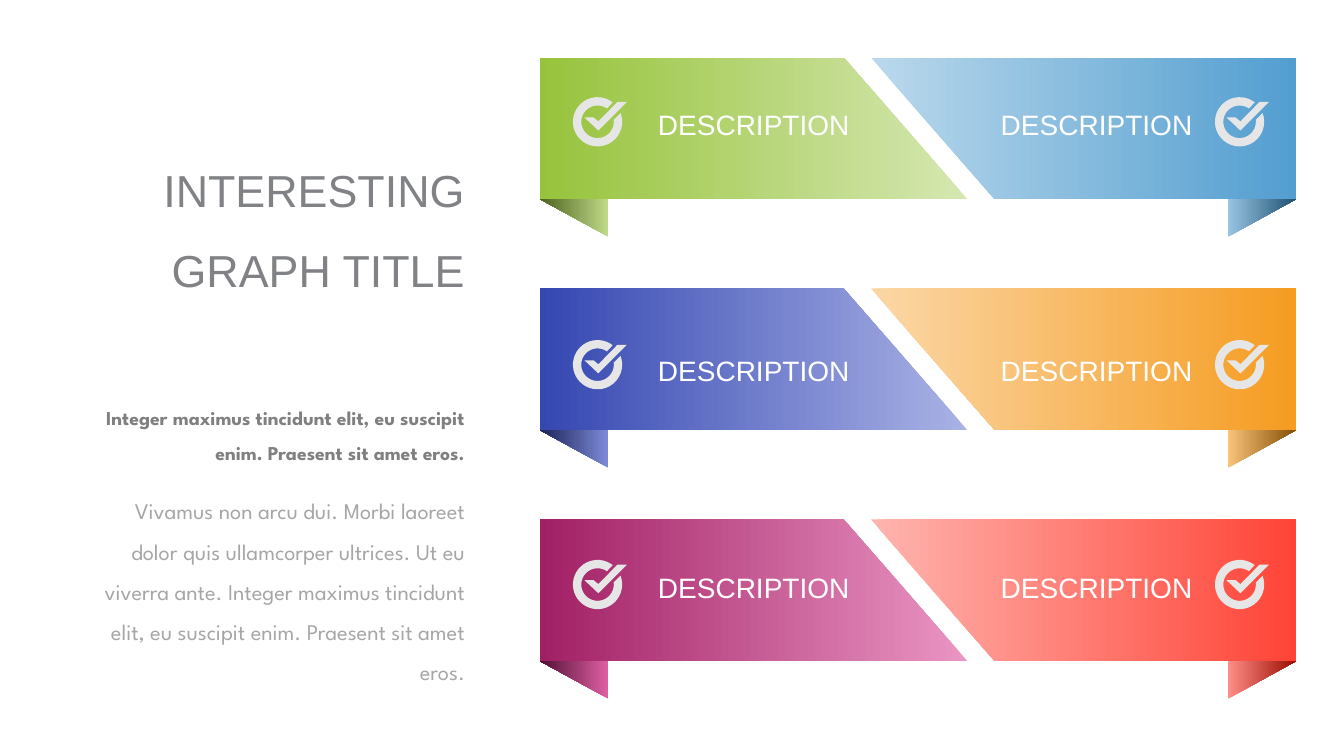
"""Build a slide with a title, two text blocks and six folded ribbon banners."""
from math import cos, radians, sin

from pptx import Presentation
from pptx.dml.color import RGBColor
from pptx.enum.text import MSO_ANCHOR, MSO_AUTO_SIZE, PP_ALIGN
from pptx.util import Cm, Pt

MIDDLE = MSO_ANCHOR.MIDDLE
NO_AUTOFIT = MSO_AUTO_SIZE.NONE
RIGHT, CENTER = PP_ALIGN.RIGHT, PP_ALIGN.CENTER
TITLE_ONLY = 5

BANNER_TOP, BANNER_PITCH, BANNER_HEIGHT = 1.45, 5.82, 3.57
FOLD_HEIGHT = 0.95
RING_OUTER, RING_INNER = 0.62, 0.41
TICK = [(0.5, -0.5), (0.02, -0.01), (-0.1, -0.11), (-0.33, -0.11), (0.02, 0.22), (0.74, -0.5)]

SIDES = [
    {"edge": 13.61, "top": 21.26, "bottom": 24.38, "fold": 15.34, "label": 15.67, "icon": 15.06, "angle": 180},
    {"edge": 32.66, "top": 21.95, "bottom": 25.07, "fold": 30.94, "label": 24.31, "icon": 31.24, "angle": 0},
]
ROWS = [
    {"label": 2.18, "icon": 3.07,
     "colors": [("D5E7B1", "97C33C", "C1DB8A", "4C621E"), ("BAD8EC", "539ED0", "98C5E3", "1F5172")]},
    {"label": 8.38, "icon": 9.19,
     "colors": [("A9B2E5", "3547B1", "7E8BD8", "1B2358"), ("FBD7A6", "F59C21", "F9C47A", "855006")]},
    {"label": 13.84, "icon": 14.73,
     "colors": [("EA95C3", "A12065", "DF60A4", "511033"), ("FFB4AF", "FF4437", "FF8F87", "9B0A00")]},
]


def rgb(hex_color):
    """Turn a hex string into a colour."""
    return RGBColor.from_string(hex_color)


def arc(radius, start, end, steps=40):
    """Return points along an arc, with angles in degrees, clockwise."""
    angles = [radians(start + (end - start) * i / steps) for i in range(steps + 1)]
    return [(radius * cos(a), radius * sin(a)) for a in angles]


class RibbonSlide:
    """Holds the style and the current slide."""

    heading_font = "Arial"
    body_font = "League Spartan"
    icon_color = "E7E6E6"
    label_color = "FFFFFF"
    line_spacing = 1.5

    def __init__(self, deck):
        """Add a title-only slide to the deck."""
        self.slide = deck.slides.add_slide(deck.slide_layouts[TITLE_ONLY])

    def set_text(self, box, text, size, color, font, align, bold=False):
        """Format a text shape and put one run into it."""
        frame = box.text_frame
        frame.word_wrap = True
        frame.auto_size = NO_AUTOFIT
        frame.vertical_anchor = MIDDLE
        paragraph = frame.paragraphs[0]
        paragraph.alignment = align
        paragraph.line_spacing = self.line_spacing
        run = paragraph.add_run()
        run.text = text
        run.font.size = Pt(size)
        run.font.name = font
        run.font.bold = bold
        run.font.color.rgb = rgb(color)

    def title(self, text, left, top, width, height):
        """Place and format the title placeholder."""
        heading = self.slide.shapes.title
        heading.left, heading.top = Cm(left), Cm(top)
        heading.width, heading.height = Cm(width), Cm(height)
        self.set_text(heading, text, 32, "818285", self.heading_font, RIGHT)

    def body(self, text, left, top, width, height, size, color, bold=False):
        """Add a right-aligned text block."""
        block = self.slide.shapes.add_textbox(Cm(left), Cm(top), Cm(width), Cm(height))
        self.set_text(block, text, size, color, self.body_font, RIGHT, bold)

    def outline(self, shapes, points):
        """Add a closed borderless polygon."""
        corners = [(Cm(x), Cm(y)) for x, y in points]
        builder = shapes.build_freeform(*corners[0], scale=1.0)
        builder.add_line_segments(corners[1:], close=True)
        polygon = builder.convert_to_shape()
        polygon.shadow.inherit = False
        polygon.line.fill.background()
        return polygon

    def gradient(self, points, colors, angle):
        """Add a polygon with a two-colour gradient."""
        fill = self.outline(self.slide.shapes, points).fill
        fill.gradient()
        fill.gradient_angle = angle
        for stop, color in zip(fill.gradient_stops, colors):
            stop.color.rgb = rgb(color)

    def banner(self, side, top, colors):
        """Add a slanted banner and the fold below it."""
        bottom = top + BANNER_HEIGHT
        edge, fold = side["edge"], side["fold"]
        face = [(side["bottom"], bottom), (edge, bottom), (edge, top), (side["top"], top)]
        self.gradient(face, colors[:2], side["angle"])
        flap = [(fold, bottom), (fold, bottom + FOLD_HEIGHT), (edge, bottom)]
        self.gradient(flap, colors[2:], side["angle"])

    def badge(self, text, side, row):
        """Add a label grouped with its check icon."""
        shapes = self.slide.shapes.add_group_shape().shapes
        ring = arc(RING_INNER, -7, 305) + arc(RING_OUTER, 308, -21)
        for offsets in (TICK, ring):
            points = [(side["icon"] + x, row["icon"] + y) for x, y in offsets]
            part = self.outline(shapes, points)
            part.fill.solid()
            part.fill.fore_color.rgb = rgb(self.icon_color)
        label = shapes.add_textbox(Cm(side["label"]), Cm(row["label"]), Cm(6.65), Cm(1.5))
        self.set_text(label, text, 20, self.label_color, self.heading_font, CENTER)


def main():
    """Build and save the deck."""
    deck = Presentation()
    deck.slide_width, deck.slide_height = Cm(33.87), Cm(19.05)
    page = RibbonSlide(deck)
    page.title("INTERESTING GRAPH TITLE", 2.06, 1.45, 9.91, 8)
    page.body("Integer maximus tincidunt elit, eu suscipit enim. Praesent sit amet eros.",
              2.06, 9.96, 9.91, 1.7, 14, "808080", bold=True)
    page.body("Vivamus non arcu dui. Morbi laoreet dolor quis ullamcorper ultrices. "
              "Ut eu viverra ante. Integer maximus tincidunt elit, eu suscipit enim. "
              "Praesent sit amet eros.", 2.06, 12.27, 9.91, 4.93, 16, "A6A6A6")
    for index, row in enumerate(ROWS):
        for side, colors in zip(SIDES, row["colors"]):
            page.banner(side, BANNER_TOP + index * BANNER_PITCH, colors)
            page.badge("DESCRIPTION", side, row)
    deck.save("out.pptx")


if __name__ == "__main__":
    main()
